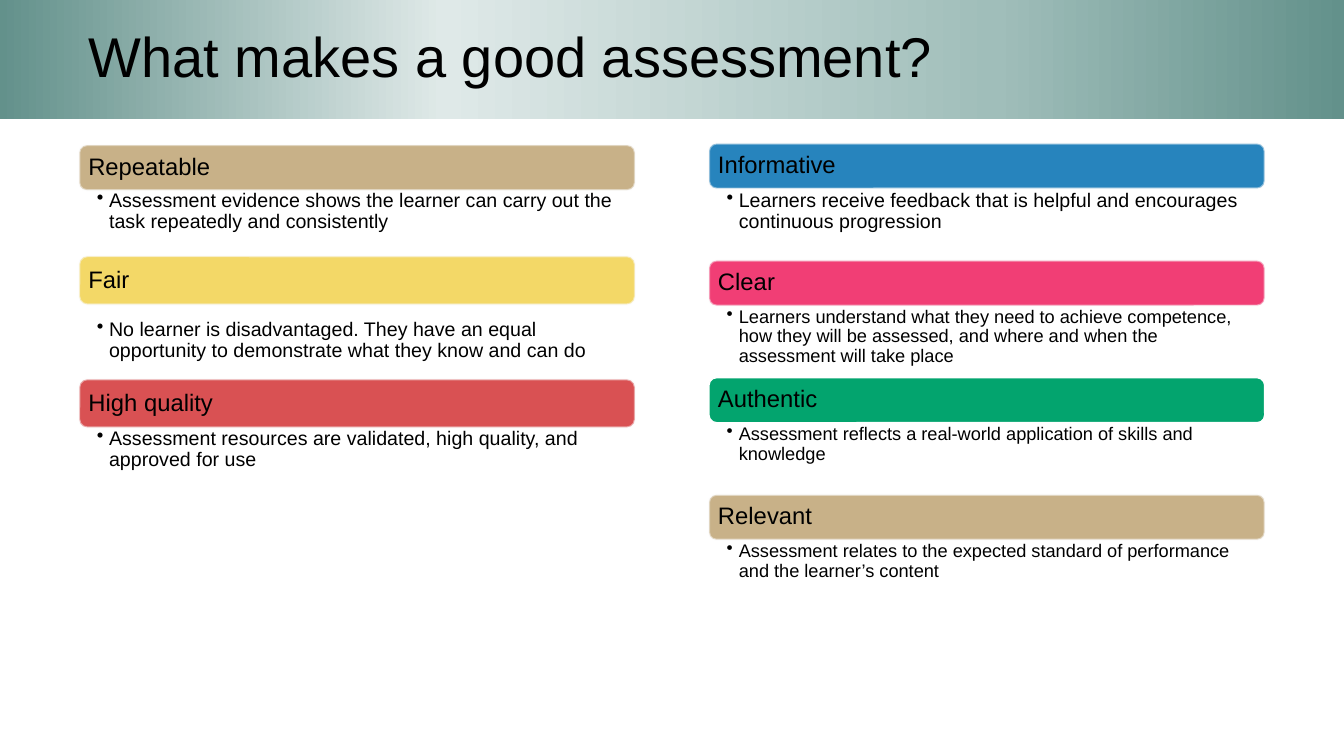
from lxml.etree import SubElement
from pptx import Presentation
from pptx.dml.color import RGBColor
from pptx.enum.shapes import MSO_SHAPE
from pptx.enum.text import MSO_ANCHOR, MSO_AUTO_SIZE, PP_ALIGN
from pptx.oxml import parse_xml
from pptx.oxml.ns import nsdecls, qn
from pptx.util import Cm, Pt

FONT = "Arial"
COLUMN_WIDTH = 14

# Left column: heading, colour, bar top, bar height, text top, text height, text
LEFT_CRITERIA = [
    ("Repeatable", "C8B188", 3.66, 1.13, 4.75, 1.57,
     "Assessment evidence shows the learner can carry out the task repeatedly and consistently"),
    ("Fair", "F3D867", 6.46, 1.21, 8, 1.83,
     "No learner is disadvantaged. They have an equal opportunity to demonstrate "
     "what they know and can do"),
    ("High quality", "D95153", 9.56, 1.21, 10.75, 1.83,
     "Assessment resources are validated, high quality, and approved for use"),
]

# Right column, evenly spaced: heading, colour, text size, text
RIGHT_CRITERIA = [
    ("Informative", "2784BD", 14,
     "Learners receive feedback that is helpful and encourages continuous progression"),
    ("Clear", "F13E75", 13,
     "Learners understand what they need to achieve competence, how they will be assessed, "
     "and where and when the assessment will take place"),
    ("Authentic", "03A46E", 13,
     "Assessment reflects a real-world application of skills and knowledge"),
    ("Relevant", "C8B188", 13,
     "Assessment relates to the expected standard of performance and the learner’s content"),
]


def colour(value):
    return RGBColor.from_string(value)


def set_text(box, text, size, margins):
    """Fill a box with one left-aligned paragraph; margins run left, top, right, bottom."""
    frame = box.text_frame
    frame.text = text
    frame.word_wrap = True
    frame.auto_size = MSO_AUTO_SIZE.NONE
    (frame.margin_left, frame.margin_top,
     frame.margin_right, frame.margin_bottom) = [Cm(margin) for margin in margins]
    para = frame.paragraphs[0]
    para.alignment = PP_ALIGN.LEFT
    para.line_spacing = 0.9
    for span in para.runs:
        span.font.name = FONT
        span.font.size = Pt(size)
        span.font.color.rgb = colour("000000")
    return para


def add_title(page, left, top, width, height):
    title = page.shapes.title
    title.left, title.top, title.width, title.height = Cm(left), Cm(top), Cm(width), Cm(height)
    set_text(title, "What makes a\u00a0good assessment?", 40, (2.24, 0.13, 0.25, 0.13))
    title.text_frame.vertical_anchor = MSO_ANCHOR.MIDDLE

    # Four-stop horizontal gradient
    stops = [(0, "63918B"), (33, "DFE9E8"), (74, "A0BEBA"), (100, "63918B")]
    stop_xml = "".join(
        f'<a:gs pos="{position * 1000}"><a:srgbClr val="{value}"/></a:gs>'
        for position, value in stops)
    title.fill.gradient()
    gradient = title.fill._xPr.find(qn("a:gradFill"))
    gradient.getparent().replace(gradient, parse_xml(
        f'<a:gradFill {nsdecls("a")} rotWithShape="1"><a:gsLst>{stop_xml}</a:gsLst>'
        '<a:lin ang="0" scaled="0"/></a:gradFill>'))


def add_bar(page, left, top, width, height, heading, fill):
    bar = page.shapes.add_shape(
        MSO_SHAPE.ROUNDED_RECTANGLE, Cm(left), Cm(top), Cm(width), Cm(height))
    bar.shadow.inherit = False
    bar.fill.solid()
    bar.fill.fore_color.rgb = colour(fill)
    solid_outline = heading == "Authentic"
    bar.line.color.rgb = colour("FFFFFF" if solid_outline else "F9F9F9")
    bar.line.width = Pt(0.85 if solid_outline else 1.35)
    if not solid_outline:
        line_colour = bar.line._ln.find(".//" + qn("a:srgbClr"))
        SubElement(line_colour, qn("a:alpha"), val="50000")
    set_text(bar, heading, 17, (0.17, 0.17, 0.17, 0.17))
    bar.text_frame.vertical_anchor = MSO_ANCHOR.MIDDLE


def add_description(page, left, top, width, height, text, size):
    box = page.shapes.add_textbox(Cm(left), Cm(top), Cm(width), Cm(height))
    right_margin = 0.28 if size == 14 else 0.33
    para = set_text(box, text, size, (0.44, 0.05, right_margin, 0.05))
    para.level = 1
    properties = para._p.get_or_add_pPr()
    properties.set("marL", str(Cm(0.31)))
    properties.set("indent", str(-Cm(0.31)))
    SubElement(properties, qn("a:buChar"), char="•")


def add_left_column(page, left, width):
    for heading, fill, bar_top, bar_height, text_top, text_height, text in LEFT_CRITERIA:
        add_bar(page, left, bar_top, width, bar_height, heading, fill)
        add_description(page, left, text_top, width, text_height, text, 14)


def add_right_column(page, left, top, width):
    bar_height, pitch = 1.13, 2.95
    for index, (heading, fill, size, text) in enumerate(RIGHT_CRITERIA):
        bar_top = top + index * pitch
        add_bar(page, left, bar_top, width, bar_height, heading, fill)
        add_description(page, left, bar_top + bar_height, width, pitch - bar_height, text, size)


def main():
    deck = Presentation()
    deck.slide_width, deck.slide_height = Cm(33.87), Cm(19.05)
    page = deck.slides.add_slide(deck.slide_layouts[5])
    add_title(page, 0, 0, 33.87, 3)
    add_left_column(page, 2, COLUMN_WIDTH)
    add_right_column(page, 17.87, 3.62, COLUMN_WIDTH)
    deck.save("out.pptx")


if __name__ == "__main__":
    main()
